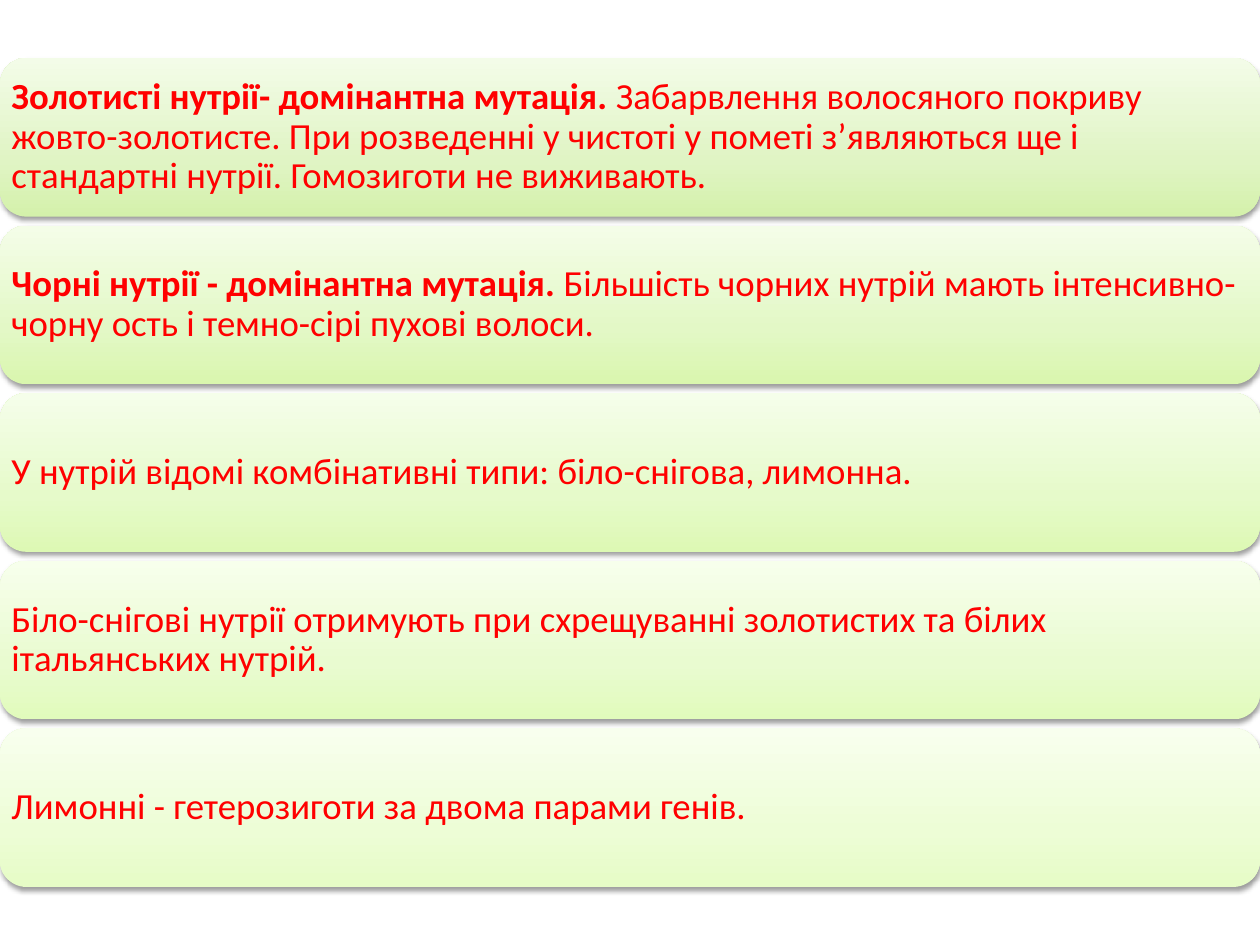
from copy import deepcopy

from lxml import etree
from pptx import Presentation
from pptx.dml.color import RGBColor
from pptx.enum.shapes import MSO_SHAPE
from pptx.enum.text import MSO_ANCHOR, PP_ALIGN
from pptx.oxml.ns import qn
from pptx.util import Inches, Pt

ROUNDED = MSO_SHAPE.ROUNDED_RECTANGLE
MIDDLE = MSO_ANCHOR.MIDDLE
LEFT = PP_ALIGN.LEFT
RED = RGBColor(0xFF, 0x00, 0x00)
GREENS = [
    [RGBColor(0xD4, 0xF1, 0xAB), RGBColor(0xE0, 0xF4, 0xC4), RGBColor(0xF3, 0xFC, 0xE8)],
    [RGBColor(0xD9, 0xF6, 0xAE), RGBColor(0xE3, 0xF8, 0xC6), RGBColor(0xF4, 0xFD, 0xE8)],
    [RGBColor(0xDD, 0xF9, 0xB4), RGBColor(0xE6, 0xFA, 0xCA), RGBColor(0xF5, 0xFE, 0xEA)],
    [RGBColor(0xE1, 0xFB, 0xBC), RGBColor(0xE9, 0xFB, 0xD0), RGBColor(0xF7, 0xFF, 0xEC)],
    [RGBColor(0xE6, 0xFC, 0xC6), RGBColor(0xED, 0xFD, 0xD6), RGBColor(0xF8, 0xFF, 0xEE)],
]
STOPS = [0, 0.35, 1]
TOP, HEIGHT, PITCH = 0.46, 1.26, 1.33
BARS = [
    ("Золотисті нутрії- домінантна мутація. ",
     "Забарвлення волосяного покриву жовто-золотисте. При розведенні у чистоті "
     "у пометі з’являються ще і стандартні нутрії. Гомозиготи не виживають."),
    ("Чорні нутрії - домінантна мутація. ",
     "Більшість чорних нутрій мають інтенсивно-чорну ость і темно-сірі пухові волоси."),
    ("", "У нутрій відомі комбінативні типи: біло-снігова, лимонна."),
    ("", "Біло-снігові нутрії отримують при схрещуванні золотистих та білих "
         "італьянських нутрій."),
    ("", "Лимонні - гетерозиготи за двома парами генів."),
]


def apply(obj, values):
    for name, value in values.items():
        setattr(obj, name, value)


class Deck:
    """Holds the text style and the current slide."""

    font = {"name": "Calibri", "size": Pt(21)}
    paragraph = {"alignment": LEFT, "line_spacing": 0.9, "space_after": Pt(7.35)}
    frame = {"word_wrap": True, "vertical_anchor": MIDDLE,
             "margin_left": Inches(0.03), "margin_right": Inches(0.03),
             "margin_top": Inches(0.03), "margin_bottom": Inches(0.03)}

    def __init__(self, prs):
        self.s = prs.slides.add_slide(prs.slide_layouts[6])

    def gradient(self, sp, colors):
        sp.fill.gradient()
        sp.fill.gradient_angle = 90
        stops = sp._element.spPr.find(".//" + qn("a:gsLst"))
        stops.append(deepcopy(stops[-1]))
        for stop, position, color in zip(sp.fill.gradient_stops, STOPS, colors):
            stop.position = position
            stop.color.rgb = color

    def shadow(self, sp):
        sp.shadow.inherit = False
        effects = sp._element.spPr.find(qn("a:effectLst"))
        outer = etree.SubElement(effects, qn("a:outerShdw"), blurRad=str(Pt(3.1)),
                                 dist=str(Pt(1.6)), dir="5400000", rotWithShape="0")
        color = etree.SubElement(outer, qn("a:srgbClr"), val="000000")
        etree.SubElement(color, qn("a:alpha"), val="38000")

    def text(self, sp, lead, body):
        tf = sp.text_frame
        apply(tf, self.frame)
        p = tf.paragraphs[0]
        apply(p, self.paragraph)
        for words, bold in ((lead, True), (body, False)):
            if words:
                r = p.add_run()
                r.text = words
                apply(r.font, {**self.font, "bold": bold})
                r.font.color.rgb = RED

    def bar(self, top, colors, lead, body):
        sp = self.s.shapes.add_shape(ROUNDED, Inches(0), Inches(top),
                                     Inches(10), Inches(HEIGHT))
        sp.line.fill.background()
        self.gradient(sp, colors)
        self.shadow(sp)
        self.text(sp, lead, body)


def main():
    prs = Presentation()
    apply(prs, {"slide_width": Inches(10), "slide_height": Inches(7.5)})
    deck = Deck(prs)
    for i, (colors, (lead, body)) in enumerate(zip(GREENS, BARS)):
        deck.bar(TOP + i * PITCH, colors, lead, body)
    prs.save("out.pptx")


if __name__ == "__main__":
    main()
